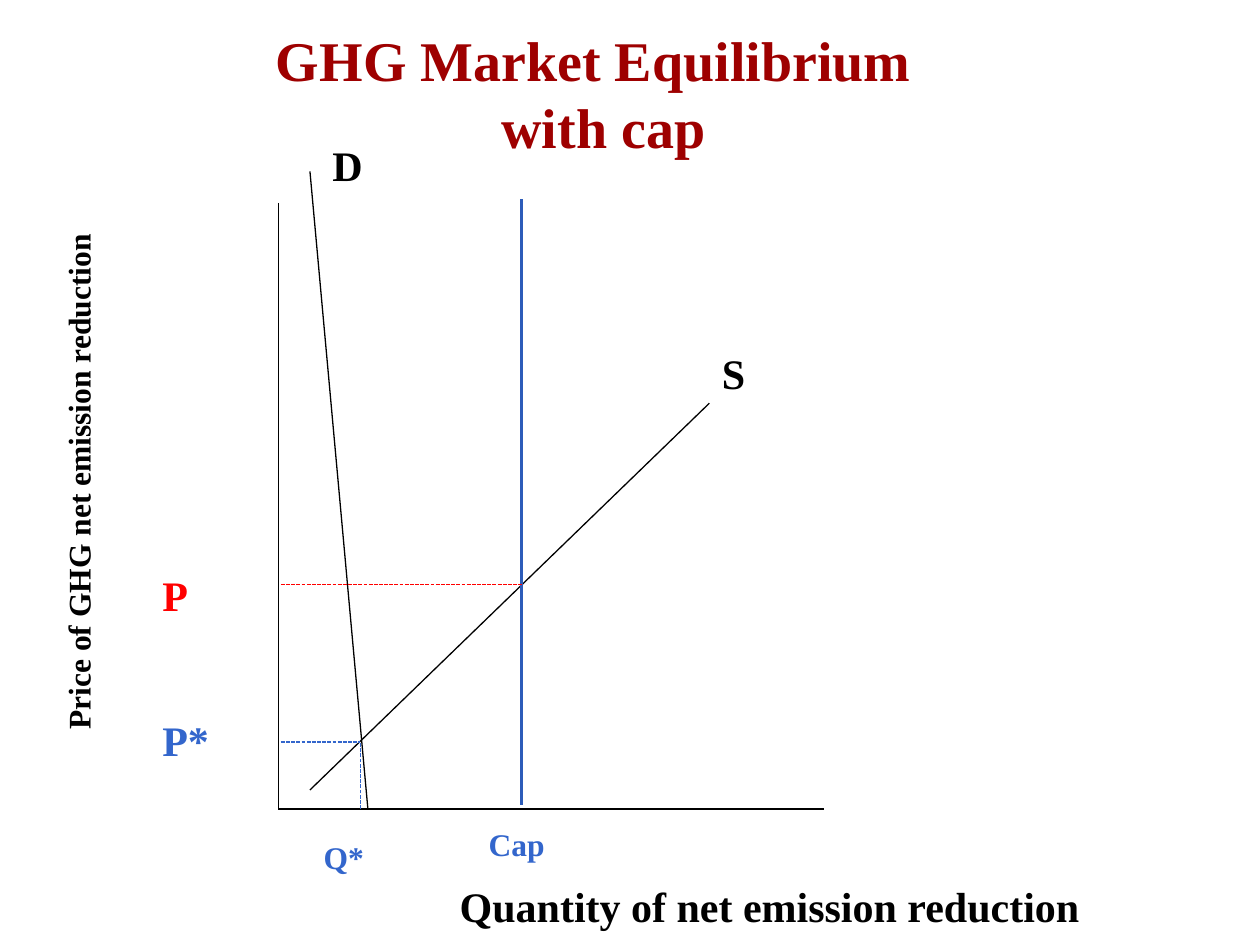
from collections import namedtuple

from lxml.etree import SubElement
from pptx import Presentation
from pptx.dml.color import RGBColor
from pptx.enum.dml import MSO_LINE
from pptx.enum.shapes import MSO_CONNECTOR
from pptx.enum.text import MSO_ANCHOR, MSO_AUTO_SIZE, PP_ALIGN
from pptx.oxml.ns import qn
from pptx.util import Inches, Pt

FONT = "Times New Roman"
BLACK = RGBColor(0x00, 0x00, 0x00)
MAROON = RGBColor(0x9E, 0x00, 0x00)
RED = RGBColor(0xFF, 0x00, 0x00)
BLUE = RGBColor(0x33, 0x66, 0xCC)
CAP_BLUE = RGBColor(0x2D, 0x5C, 0xB9)

# The slide is a grid of 100 columns by 75 rows.
COLS, ROWS = 100, 75
CELL = Inches(10) / COLS
Box = namedtuple("Box", "x y w h")


def grid(n):
    return round(n * CELL)


def place(sp, box):
    sp.left, sp.top, sp.width, sp.height = map(grid, box)


def add_run(p, text, size, color):
    r = p.add_run()
    r.text = text
    r.font.name = FONT
    r.font.size = Pt(size)
    r.font.bold = True
    r.font.color.rgb = color


def add_label(s, box, text, size=24, color=BLACK, vert=None):
    sp = s.shapes.add_textbox(*map(grid, box))
    tf = sp.text_frame
    tf.word_wrap = False
    tf.auto_size = MSO_AUTO_SIZE.SHAPE_TO_FIT_TEXT
    add_run(tf.paragraphs[0], text, size, color)
    if vert:
        sp._element.txBody.find(qn("a:bodyPr")).set("vert", vert)


def add_line(s, box, start, end, color=BLACK, width=0.75, dash=None):
    """Draw a line between two points measured from the box's top left."""
    (x1, y1), (x2, y2) = start, end
    line = s.shapes.add_connector(
        MSO_CONNECTOR.STRAIGHT,
        grid(box.x + x1), grid(box.y + y1), grid(box.x + x2), grid(box.y + y2))
    line.line.color.rgb = color
    line.line.width = Pt(width)
    if dash:
        line.line.dash_style = dash
    SubElement(line._element.spPr, qn("a:effectLst"))


def add_title(s, box):
    title = s.shapes.title
    place(title, box)
    tf = title.text_frame
    tf.word_wrap = False
    tf.auto_size = MSO_AUTO_SIZE.SHAPE_TO_FIT_TEXT
    tf.vertical_anchor = MSO_ANCHOR.TOP
    lines = (("GHG Market Equilibrium", PP_ALIGN.LEFT),
             ("with cap", PP_ALIGN.CENTER))
    for i, (text, align) in enumerate(lines):
        p = tf.add_paragraph() if i else tf.paragraphs[0]
        p.alignment = align
        add_run(p, text, 32, MAROON)


def add_plot(s, box):
    """Axes, supply and demand curves, equilibrium guides and the cap."""
    base = box.h
    q_star, p_star = 6.5, 42.8
    cap, p_cap = 19.3, 30.3
    guide = 0.2
    dash = MSO_LINE.SQUARE_DOT

    add_line(s, box, (0, 0), (0, base))
    add_line(s, box, (0, base), (box.w, base))
    add_line(s, box, (2.5, -2.5), (7.1, base))
    add_line(s, box, (2.5, 46.6), (34.2, 15.9))
    add_line(s, box, (guide, p_star), (q_star, p_star), BLUE, dash=dash)
    add_line(s, box, (q_star, base), (q_star, p_star), BLUE, dash=dash)
    add_line(s, box, (cap, -0.3), (cap, base - 0.3), CAP_BLUE, 2)
    add_line(s, box, (guide, p_cap), (cap, p_cap), RED, dash=dash)


def add_plot_labels(s, box):
    labels = (
        (3.3, -5.5, 7.7, 5, "D", 24, BLACK),
        (34.2, 11, 3.9, 5, "S", 24, BLACK),
        (-10.2, 40.1, 5.8, 5, "P*", 24, BLUE),
        (-10.2, 28.6, 4.1, 5, "P", 24, RED),
        (2.6, 49.9, 5.2, 4, "Q*", 18, BLUE),
        (15.7, 48.9, 6.5, 4, "Cap", 18, BLUE),
        (13.4, 53.3, 51.7, 5, "Quantity of net emission reduction", 24, BLACK),
    )
    for x, y, w, h, text, size, color in labels:
        add_label(s, Box(box.x + x, box.y + y, w, h), text, size, color)
    add_label(s, Box(box.x - 17.9, box.y + 2.1, 5, 40.7),
              "Price of GHG net emission reduction", 18, vert="vert270")


def main():
    prs = Presentation()
    prs.slide_width, prs.slide_height = grid(COLS), grid(ROWS)
    s = prs.slides.add_slide(prs.slide_layouts[5])
    plot = Box(22.1, 16.1, 43.3, 48.1)
    add_title(s, Box(20.9, 1.5, 54, 11.8))
    add_plot(s, plot)
    add_plot_labels(s, plot)
    prs.save("out.pptx")


if __name__ == "__main__":
    main()
